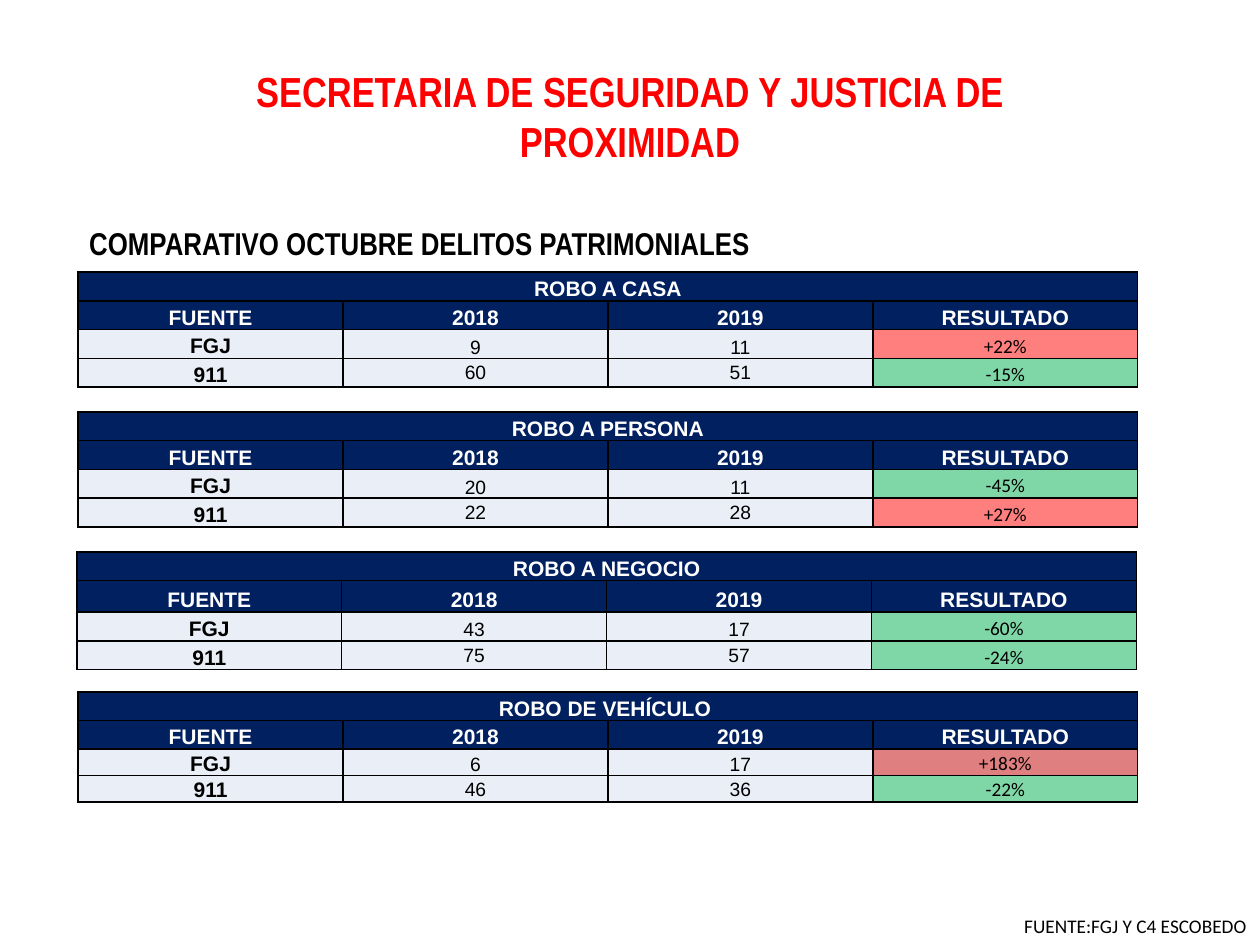
from dataclasses import dataclass

from lxml.etree import SubElement
from pptx import Presentation
from pptx.dml.color import RGBColor
from pptx.enum.text import MSO_ANCHOR as Anchor, MSO_AUTO_SIZE as AutoSize, PP_ALIGN as Align
from pptx.oxml import parse_xml
from pptx.oxml.ns import nsdecls, qn
from pptx.util import Inches, Pt


@dataclass(frozen=True)
class Theme:
    title_font: str = "Arial Narrow"
    table_font: str = "Arial"
    result_font: str = "Calibri"
    title_size: int = 24
    subtitle_size: int = 18
    heading_size: int = 12
    value_size: int = 11
    black: str = "000000"
    white: str = "FFFFFF"
    title: str = "FF0000"
    header: str = "002060"
    body: str = "EAEFF7"
    rise: str = "FF0000"
    sharp_rise: str = "C00000"
    fall: str = "00B050"


THEME = Theme()
LEFT, FIRST_TOP, TABLE_STEP = 0.62, 2.16, 1.11
COLUMN_WIDTH, ROW_HEIGHT = 2.1025, 0.228
HEADINGS = ("FUENTE", "2018", "2019", "RESULTADO")

# Name, left shift, header row height, data row height, data rows
CRIMES = (
    ("ROBO A CASA", 0, ROW_HEIGHT, ROW_HEIGHT,
     (("FGJ", 9, 11, 22), ("911", 60, 51, -15))),
    ("ROBO A PERSONA", 0, ROW_HEIGHT, ROW_HEIGHT,
     (("FGJ", 20, 11, -45), ("911", 22, 28, 27))),
    ("ROBO A NEGOCIO", -0.01, 0.25, ROW_HEIGHT,
     (("FGJ", 43, 17, -60), ("911", 75, 57, -24))),
    ("ROBO DE VEHÍCULO ", 0, ROW_HEIGHT, 0.21,
     (("FGJ", 6, 17, 183), ("911", 46, 36, -22))),
)


def format_text(text_frame, font_name, size, color, bold=False, align=Align.LEFT):
    for paragraph in text_frame.paragraphs:
        paragraph.alignment = align
        for run in paragraph.runs:
            run.font.name = font_name
            run.font.size = Pt(size)
            run.font.bold = bold
            run.font.color.rgb = RGBColor.from_string(color)


def add_title(slide, text):
    title = slide.shapes.title
    title.left, title.top, title.width, title.height = map(Inches, (1.9, 0.47, 6.2, 0.91))
    frame = title.text_frame
    frame.text = text
    frame.word_wrap = True
    frame.auto_size = AutoSize.NONE
    frame.vertical_anchor = Anchor.TOP
    format_text(frame, THEME.title_font, THEME.title_size, THEME.title, True, Align.CENTER)


def add_label(slide, text, box, font_name, size, bold=False, wrap=True):
    frame = slide.shapes.add_textbox(*map(Inches, box)).text_frame
    frame.text = text
    frame.word_wrap = wrap
    format_text(frame, font_name, size, THEME.black, bold)


def set_borders(cell):
    properties = cell._tc.get_or_add_tcPr()
    for index, side in enumerate(("lnL", "lnR", "lnT", "lnB")):
        properties.insert(index, parse_xml(
            f'<a:{side} {nsdecls("a")} w="{Pt(1)}"><a:solidFill>'
            f'<a:srgbClr val="{THEME.black}"/></a:solidFill></a:{side}>'))


def fill_cell(cell, text, fill, font_name, size, color, bold=False,
              anchor=Anchor.BOTTOM, half_transparent=False):
    cell.text = text
    cell.vertical_anchor = anchor
    cell.margin_left = cell.margin_right = cell.margin_top = Inches(0.01)
    cell.margin_bottom = 0
    cell.fill.solid()
    cell.fill.fore_color.rgb = RGBColor.from_string(fill)
    if half_transparent:
        fill_color = cell._tc.tcPr.find(f"{qn('a:solidFill')}/{qn('a:srgbClr')}")
        SubElement(fill_color, qn("a:alpha")).set("val", "50000")
    set_borders(cell)
    format_text(cell.text_frame, font_name, size, color, bold, Align.CENTER)


def result_color(change):
    if change < 0:
        return THEME.fall
    return THEME.sharp_rise if change > 100 else THEME.rise


def fill_data_row(table, row, record, number_anchor):
    source, *counts, change = record
    fill_cell(table.cell(row, 0), source, THEME.body, THEME.table_font,
              THEME.heading_size, THEME.black, True)
    for column, count in enumerate(counts, start=1):
        fill_cell(table.cell(row, column), str(count), THEME.body, THEME.table_font,
                  THEME.value_size, THEME.black, anchor=number_anchor)
    fill_cell(table.cell(row, 3), f"{change:+d}%", result_color(change), THEME.result_font,
              THEME.value_size, THEME.black, half_transparent=True)


def add_crime_table(slide, position, name, shift, header_height, data_height, records):
    heights = (ROW_HEIGHT, header_height, data_height, data_height)
    columns = len(HEADINGS)
    table = slide.shapes.add_table(
        len(heights), columns, Inches(LEFT + shift), Inches(FIRST_TOP + position * TABLE_STEP),
        Inches(columns * COLUMN_WIDTH), Inches(sum(heights))).table
    for row, height in zip(table.rows, heights):
        row.height = Inches(height)
    for row, texts in enumerate(((name, "", "", ""), HEADINGS)):
        for column, text in enumerate(texts):
            fill_cell(table.cell(row, column), text, THEME.header, THEME.table_font,
                      THEME.heading_size, THEME.white, True)
    table.cell(0, 0).merge(table.cell(0, columns - 1))
    for row, (record, anchor) in enumerate(zip(records, (Anchor.BOTTOM, Anchor.MIDDLE)), start=2):
        fill_data_row(table, row, record, anchor)


def main():
    presentation = Presentation()
    presentation.slide_width, presentation.slide_height = Inches(10), Inches(7.5)
    slide = presentation.slides.add_slide(presentation.slide_layouts[5])
    add_title(slide, "SECRETARIA DE SEGURIDAD Y JUSTICIA DE PROXIMIDAD")
    add_label(slide, "COMPARATIVO OCTUBRE DELITOS PATRIMONIALES", (0.61, 1.73, 7.38, 0.4),
              THEME.title_font, THEME.subtitle_size, bold=True)
    for position, crime in enumerate(CRIMES):
        add_crime_table(slide, position, *crime)
    add_label(slide, "FUENTE:FGJ Y C4 ESCOBEDO", (8.03, 7.21, 1.98, 0.29),
              THEME.result_font, THEME.value_size, wrap=False)
    presentation.save("out.pptx")


if __name__ == "__main__":
    main()
